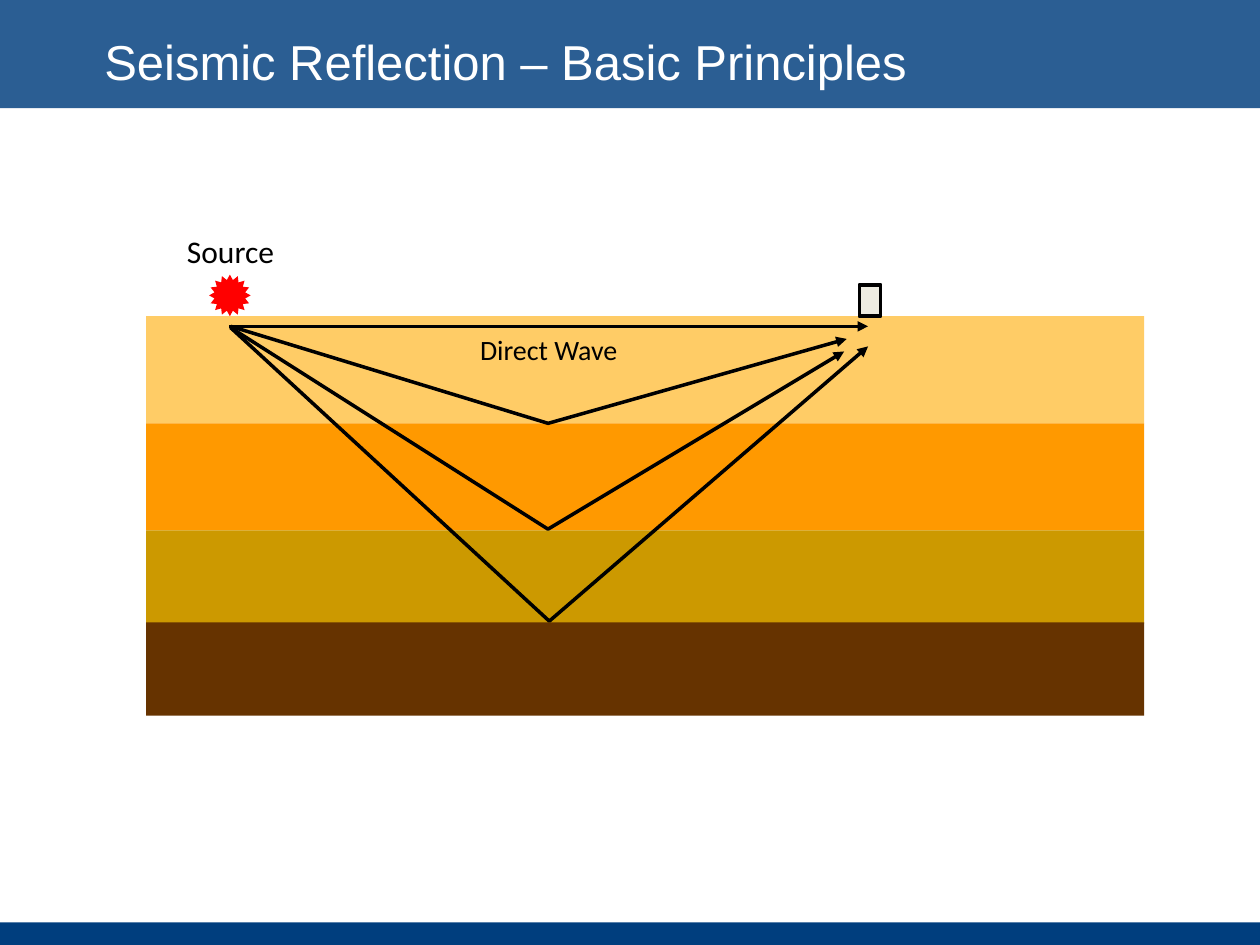
from typing import NamedTuple

from lxml.etree import SubElement
from pptx import Presentation
from pptx.dml.color import RGBColor
from pptx.enum.shapes import MSO_CONNECTOR, MSO_SHAPE
from pptx.enum.text import MSO_ANCHOR, MSO_AUTO_SIZE, PP_ALIGN
from pptx.oxml.ns import qn
from pptx.util import Inches, Pt

NAVY = RGBColor(0x00, 0x3E, 0x7E)
WHITE = RGBColor(0xFF, 0xFF, 0xFF)
BLACK = RGBColor(0x00, 0x00, 0x00)
RED = RGBColor(0xFF, 0x00, 0x00)
CREAM = RGBColor(0xEE, 0xEC, 0xE1)
SAND = RGBColor(0xFF, 0xCC, 0x66)
ORANGE = RGBColor(0xFF, 0x99, 0x00)
OCHRE = RGBColor(0xCC, 0x99, 0x00)
BROWN = RGBColor(0x66, 0x33, 0x00)


class Box(NamedTuple):
    left: float
    top: float
    width: float
    height: float

    def lengths(self):
        return [Inches(value) for value in self]


class Layer(NamedTuple):
    top: float
    height: float
    color: RGBColor


class Point(NamedTuple):
    x: float
    y: float

    def lengths(self):
        return Inches(self.x), Inches(self.y)


class Ray(NamedTuple):
    start: Point
    reflection: Point
    end: Point


class Label(NamedTuple):
    text: str
    box: Box
    size: int


LAYERS = [
    Layer(2.51, 0.85, SAND),
    Layer(3.36, 0.85, ORANGE),
    Layer(4.21, 0.74, OCHRE),
    Layer(4.94, 0.74, BROWN),
]
RAYS = [
    Ray(Point(1.83, 2.59), Point(4.35, 3.36), Point(6.72, 2.69)),
    Ray(Point(1.83, 2.6), Point(4.35, 4.2), Point(6.7, 2.79)),
    Ray(Point(1.83, 2.6), Point(4.36, 4.93), Point(6.89, 2.75)),
]
LABELS = [
    Label("Source", Box(1.38, 1.79, 0.9, 0.4), 18),
    Label("Direct Wave", Box(3.65, 2.59, 1.41, 0.37), 16),
]


def add_filled(slide, kind: MSO_SHAPE, box: Box, color: RGBColor):
    shape = slide.shapes.add_shape(kind, *box.lengths())
    shape.shadow.inherit = False
    shape.fill.solid()
    shape.fill.fore_color.rgb = color
    shape.line.fill.background()
    return shape


def set_black_line(shape, arrow: bool = False) -> None:
    shape.line.color.rgb = BLACK
    shape.line.width = Pt(2)
    if arrow:
        SubElement(shape.line._get_or_add_ln(), qn("a:tailEnd"), type="triangle")


def add_ray(slide, ray: Ray) -> None:
    builder = slide.shapes.build_freeform(*ray.start.lengths())
    builder.add_line_segments(
        [ray.reflection.lengths(), ray.end.lengths()], close=False
    )
    shape = builder.convert_to_shape()
    shape.shadow.inherit = False
    shape.fill.background()
    set_black_line(shape, arrow=True)


def add_text(slide, label: Label, font_name: str, color: RGBColor):
    frame = slide.shapes.add_textbox(*label.box.lengths()).text_frame
    paragraph = frame.paragraphs[0]
    paragraph.text = label.text
    paragraph.font.name = font_name
    paragraph.font.size = Pt(label.size)
    paragraph.font.color.rgb = color
    return frame


def add_label(slide, label: Label) -> None:
    frame = add_text(slide, label, "Calibri", BLACK)
    frame.word_wrap = False
    frame.auto_size = MSO_AUTO_SIZE.SHAPE_TO_FIT_TEXT
    frame.paragraphs[0].alignment = PP_ALIGN.CENTER


def main() -> None:
    presentation = Presentation()
    presentation.slide_width = Inches(10)
    presentation.slide_height = Inches(7.5)
    slide = presentation.slides.add_slide(presentation.slide_layouts[6])

    # Footer and translucent header bands
    add_filled(slide, MSO_SHAPE.RECTANGLE, Box(0, 7.32, 10, 0.18), NAVY)
    header = add_filled(slide, MSO_SHAPE.RECTANGLE, Box(0, 0, 10, 0.86), NAVY)
    header_color = header._element.spPr.find(".//" + qn("a:srgbClr"))
    SubElement(header_color, qn("a:alpha"), val="83000")

    # Title
    title = Label("Seismic Reflection – Basic Principles", Box(0.73, 0.19, 6.77, 0.58), 28)
    title_frame = add_text(slide, title, "Arial", WHITE)
    title_frame.word_wrap = True
    title_frame.vertical_anchor = MSO_ANCHOR.MIDDLE

    # Ground layers
    for layer in LAYERS:
        box = Box(1.16, layer.top, 7.92, layer.height)
        add_filled(slide, MSO_SHAPE.RECTANGLE, box, layer.color)

    # Source and receiver on the surface
    source = add_filled(slide, MSO_SHAPE.STAR_16_POINT, Box(1.66, 2.18, 0.33, 0.33), RED)
    source.adjustments[0] = 0.375
    receiver = add_filled(slide, MSO_SHAPE.RECTANGLE, Box(6.82, 2.26, 0.17, 0.25), CREAM)
    set_black_line(receiver)

    # Direct wave and reflected rays
    direct_wave = slide.shapes.add_connector(
        MSO_CONNECTOR.STRAIGHT, *Point(1.82, 2.59).lengths(), *Point(6.89, 2.59).lengths()
    )
    set_black_line(direct_wave, arrow=True)
    SubElement(direct_wave._element.spPr, qn("a:effectLst"))
    for ray in RAYS:
        add_ray(slide, ray)

    # Labels
    for label in LABELS:
        add_label(slide, label)

    presentation.save("out.pptx")


if __name__ == "__main__":
    main()
